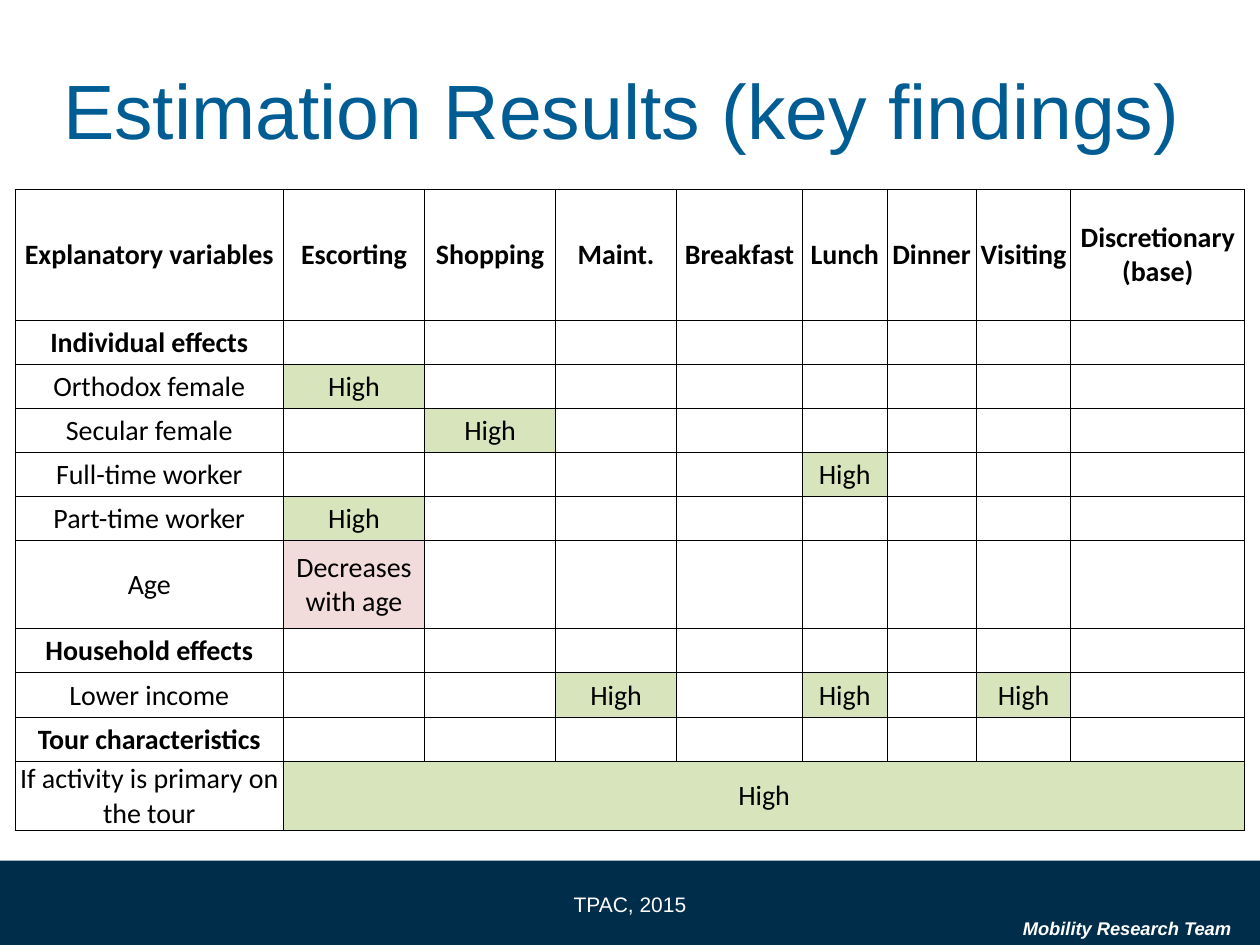
from lxml import etree
from pptx import Presentation
from pptx.dml.color import RGBColor
from pptx.enum.shapes import MSO_SHAPE
from pptx.enum.text import MSO_ANCHOR, MSO_AUTO_SIZE, PP_ALIGN
from pptx.oxml.ns import qn
from pptx.util import Inches, Pt

RECT = MSO_SHAPE.RECTANGLE
TOP, MIDDLE = MSO_ANCHOR.TOP, MSO_ANCHOR.MIDDLE
LEFT, CENTER = PP_ALIGN.LEFT, PP_ALIGN.CENTER
NO_FIT = MSO_AUTO_SIZE.NONE
NAVY, BLUE, WHITE, BLACK = "002E4A", "005D94", "FFFFFF", "000000"
GREEN, PINK = "D8E4BC", "F2DCDB"

HEADERS = ["Explanatory variables", "Escorting", "Shopping", "Maint.", "Breakfast",
           "Lunch", "Dinner", "Visiting", "Discretionary (base)"]
COL_WIDTHS = [2.13, 1.12, 1.04, 0.96, 1, 0.67, 0.71, 0.75, 1.38]
ROW = 0.35
HEADER_ROW, AGE_ROW, TOUR_ROW = 1.04, 2 * ROW, 0.55
FINDINGS = [
    ("Individual effects", {}),
    ("Orthodox female", {"Escorting": "High"}),
    ("Secular female", {"Shopping": "High"}),
    ("Full-time worker", {"Lunch": "High"}),
    ("Part-time worker", {"Escorting": "High"}),
    ("Age", {"Escorting": "Decreases with age"}),
    ("Household effects", {}),
    ("Lower income", {"Maint.": "High", "Lunch": "High", "Visiting": "High"}),
    ("Tour characteristics", {}),
    ("If activity is primary on the tour", {"Escorting": "High"}),
]
ROW_HEIGHTS = {"Age": AGE_ROW, "If activity is primary on the tour": TOUR_ROW}


def rgb(color):
    return RGBColor.from_string(color)


def style(p, size, color, font="Arial", align=LEFT, bold=False, italic=False):
    p.alignment = align
    f = p.font
    f.name, f.size, f.bold, f.italic = font, Pt(size), bold, italic
    f.color.rgb = rgb(color)


def set_margins(obj, left, top, right, bottom):
    obj.margin_left, obj.margin_top = Inches(left), Inches(top)
    obj.margin_right, obj.margin_bottom = Inches(right), Inches(bottom)


def add_title(s, box, text):
    title = s.shapes.title
    title.left, title.top, title.width, title.height = map(Inches, box)
    tf = title.text_frame
    tf.text = text
    tf.auto_size, tf.vertical_anchor = NO_FIT, TOP
    set_margins(tf, 0, 0, 0, 0)
    style(tf.paragraphs[0], 44, BLUE)


def add_borders(cell, color, width):
    tc_pr = cell._tc.get_or_add_tcPr()
    for side in ("a:lnL", "a:lnR", "a:lnT", "a:lnB"):
        ln = etree.SubElement(tc_pr, qn(side), w=str(Pt(width)))
        fill = etree.SubElement(ln, qn("a:solidFill"))
        etree.SubElement(fill, qn("a:srgbClr"), val=color)


def fill_cell(cell, text, bold, fill):
    cell.text = text
    cell.vertical_anchor = MIDDLE
    set_margins(cell, 0.01, 0.01, 0.01, 0)
    style(cell.text_frame.paragraphs[0], 16, BLACK, "Calibri", CENTER, bold)
    add_borders(cell, BLACK, 0.5)
    if fill:
        cell.fill.solid()
        cell.fill.fore_color.rgb = rgb(fill)
    else:
        cell.fill.background()


def add_findings_table(s, box):
    shape = s.shapes.add_table(len(FINDINGS) + 1, len(HEADERS), *map(Inches, box))
    table = shape.table
    table.first_row = table.horz_banding = False
    for col, width in zip(table.columns, COL_WIDTHS):
        col.width = Inches(width)
    table.rows[0].height = Inches(HEADER_ROW)
    for c, header in enumerate(HEADERS):
        fill_cell(table.cell(0, c), header, True, None)
    for r, (label, effects) in enumerate(FINDINGS, 1):
        table.rows[r].height = Inches(ROW_HEIGHTS.get(label, ROW))
        fill_cell(table.cell(r, 0), label, not effects, None)
        for c, header in enumerate(HEADERS[1:], 1):
            text = effects.get(header, "")
            fill = {"": None, "High": GREEN}.get(text, PINK)
            fill_cell(table.cell(r, c), text, False, fill)
    last = len(FINDINGS)
    table.cell(last, 1).merge(table.cell(last, len(HEADERS) - 1))


def add_footer(s, left, top, width, height):
    bar = s.shapes.add_shape(RECT, *map(Inches, (left, top, width, height)))
    bar.shadow.inherit = False
    bar.fill.solid()
    bar.fill.fore_color.rgb = rgb(NAVY)
    bar.line.fill.background()

    team = s.shapes.add_textbox(Inches(left + width - 1.98), Inches(top + 0.4),
                                Inches(1.95), Inches(0.27))
    tf = team.text_frame
    tf.text = "Mobility Research Team"
    style(tf.paragraphs[0], 10.5, WHITE, bold=True, italic=True)

    event = s.shapes.add_textbox(Inches(left + (width - 4.75) / 2), Inches(top + 0.17),
                                 Inches(4.75), Inches(0.35))
    tf = event.text_frame
    tf.word_wrap, tf.vertical_anchor = True, MIDDLE
    set_margins(tf, 0, 0, 0, 0)
    tf.text = "TPAC, 2015"
    style(tf.paragraphs[0], 12, WHITE, align=CENTER)


def main():
    prs = Presentation()
    prs.slide_width, prs.slide_height = Inches(10), Inches(7.5)
    s = prs.slides.add_slide(prs.slide_layouts[5])
    add_footer(s, 0, 6.83, 10, 0.67)
    add_title(s, (0.5, 0.5, 9, 1.05), "Estimation Results (key findings)")
    add_findings_table(s, (0.12, 1.5, 9.76, 5.07))
    prs.save("out.pptx")


if __name__ == "__main__":
    main()
